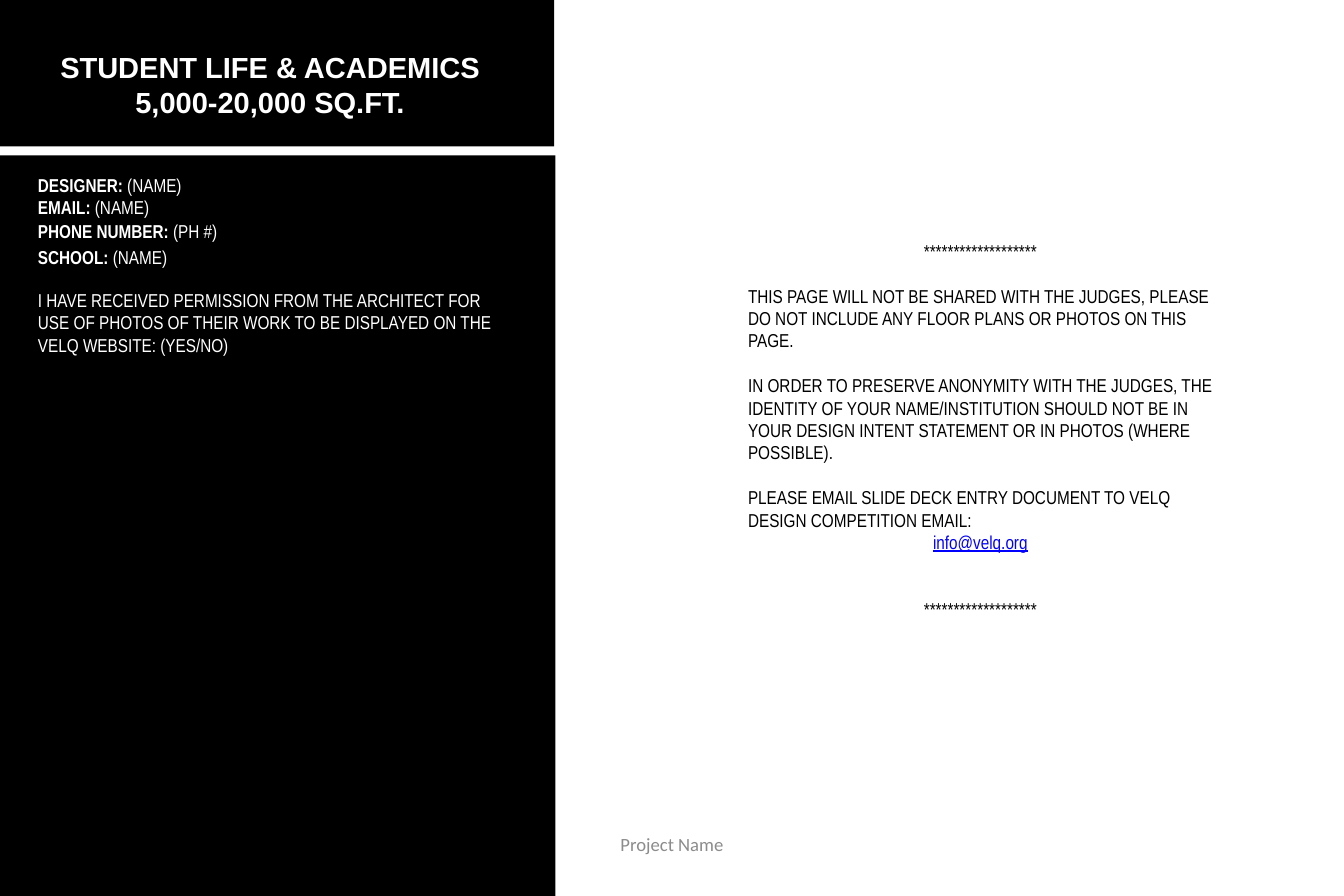
import pptx
import pptx.dml.color
import pptx.enum.shapes
import pptx.enum.text
import pptx.util

COLORS = {"panel": "000000", "light": "FFFFFF", "ink": "000000",
          "link": "0000FF", "footer": "8C8C8C"}
ALIGN = pptx.enum.text.PP_ALIGN
COLUMNS, ROWS = 18, 12
LINE = 21.6


def rgb(color):
    return pptx.dml.color.RGBColor.from_string(COLORS[color])


def write(paragraph, text, size=18, font="Arial Narrow", color="ink",
          bold=False, underline=False):
    run = paragraph.add_run()
    run.text = text
    run.font.size = pptx.util.Pt(size)
    run.font.name = font
    run.font.bold = bold
    run.font.underline = underline
    run.font.color.rgb = rgb(color)


class EntryPage:
    def __init__(self, deck):
        self.slide = deck.slides.add_slide(deck.slide_layouts[6])
        self.column = deck.slide_width / COLUMNS
        self.row = deck.slide_height / ROWS

    def place(self, left, top, width, height):
        return (round(left * self.column), round(top * self.row),
                round(width * self.column), round(height * self.row))

    def panel(self, *cells):
        panel = self.slide.shapes.add_shape(
            pptx.enum.shapes.MSO_SHAPE.RECTANGLE, *self.place(*cells))
        panel.shadow.inherit = False
        panel.fill.solid()
        panel.fill.fore_color.rgb = rgb("panel")
        panel.line.fill.background()

    def frame(self, *cells, grow=True):
        frame = self.slide.shapes.add_textbox(*self.place(*cells)).text_frame
        frame.word_wrap = True
        if grow:
            frame.auto_size = pptx.enum.text.MSO_AUTO_SIZE.SHAPE_TO_FIT_TEXT
        else:
            frame.margin_left = frame.margin_right = 0
            frame.margin_top = frame.margin_bottom = 0
        return frame

    def paragraphs(self, frame, lines, **style):
        for index, (text, align, blank_lines, extra) in enumerate(lines):
            paragraph = frame.add_paragraph() if index else frame.paragraphs[0]
            paragraph.alignment = align
            paragraph.space_before = pptx.util.Pt(blank_lines * LINE)
            write(paragraph, text, **{**style, **extra})

    def field(self, top, label, value):
        paragraph = self.frame(0.41, top, 6.42, 0.4).paragraphs[0]
        write(paragraph, label + " ", color="light", bold=True)
        write(paragraph, value, color="light")


def main():
    deck = pptx.Presentation()
    deck.slide_width = pptx.util.Inches(18)
    deck.slide_height = pptx.util.Inches(12)
    page = EntryPage(deck)

    page.panel(0, 0, 7.42, 1.96)
    page.panel(0, 2.08, 7.44, 9.92)

    page.paragraphs(page.frame(0.19, 0.61, 6.85, 1.04), [
        ("STUDENT LIFE & ACADEMICS", ALIGN.CENTER, 0, {}),
        ("5,000-20,000 SQ.FT.", ALIGN.CENTER, 0, {}),
    ], size=28, font="Arial", color="light", bold=True)

    for top, label, value in [
        (2.28, "DESIGNER:", "(NAME)"),
        (2.58, "EMAIL:", "(NAME)"),
        (2.89, "PHONE NUMBER:", "(PH #)"),
        (3.25, "SCHOOL:", "(NAME)"),
    ]:
        page.field(top, label, value)

    page.paragraphs(page.frame(0.41, 3.82, 6.42, 1.01), [
        ("I HAVE RECEIVED PERMISSION FROM THE ARCHITECT FOR USE OF PHOTOS OF "
         "THEIR WORK TO BE DISPLAYED ON THE VELQ WEBSITE: (YES/NO)",
         ALIGN.LEFT, 0, {}),
    ], color="light")

    divider = "*" * 19
    page.paragraphs(page.frame(9.92, 3.16, 6.42, 5.55), [
        (divider, ALIGN.CENTER, 0, {}),
        ("THIS PAGE WILL NOT BE SHARED WITH THE JUDGES, PLEASE DO NOT INCLUDE "
         "ANY FLOOR PLANS OR PHOTOS ON THIS PAGE.", ALIGN.LEFT, 1, {}),
        ("IN ORDER TO PRESERVE ANONYMITY WITH THE JUDGES, THE IDENTITY OF YOUR "
         "NAME/INSTITUTION SHOULD NOT BE IN YOUR DESIGN INTENT STATEMENT OR IN "
         "PHOTOS (WHERE POSSIBLE).", ALIGN.LEFT, 1, {}),
        ("PLEASE EMAIL SLIDE DECK ENTRY DOCUMENT TO VELQ DESIGN COMPETITION "
         "EMAIL:", ALIGN.LEFT, 1, {}),
        ("info@velq.org", ALIGN.CENTER, 0, {"color": "link", "underline": True}),
        (divider, ALIGN.CENTER, 2, {}),
    ])

    page.paragraphs(page.frame(6.12, 11.16, 5.76, 0.6, grow=False), [
        ("Project Name", ALIGN.CENTER, 0, {}),
    ], font="Calibri", color="footer")

    deck.save("out.pptx")


if __name__ == "__main__":
    main()
